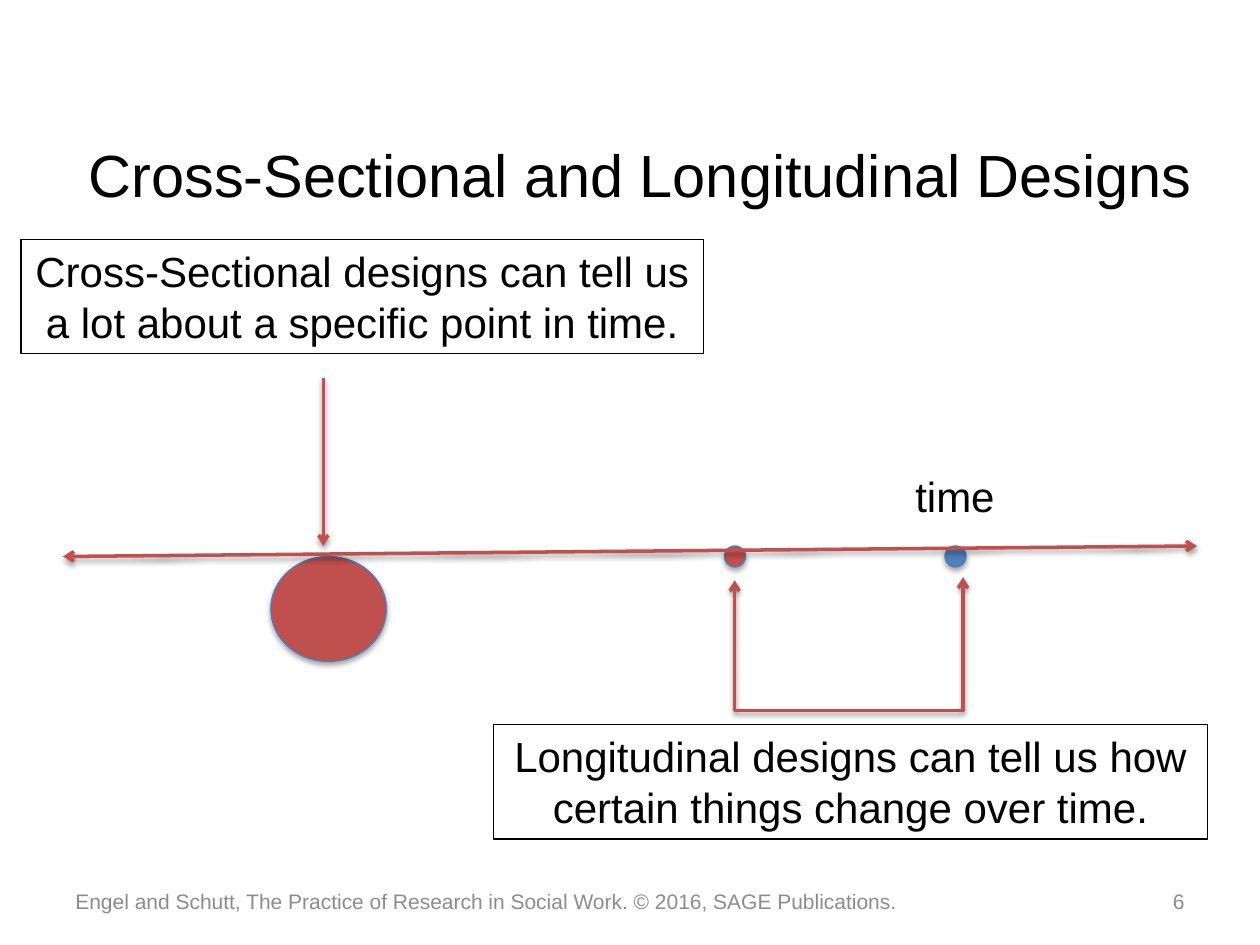
"""Build the slide on cross-sectional and longitudinal designs."""
from lxml.etree import SubElement
from pptx import Presentation
from pptx.dml.color import RGBColor
from pptx.enum.shapes import MSO_CONNECTOR as Link, MSO_SHAPE as Shape
from pptx.enum.text import MSO_ANCHOR as Anchor, PP_ALIGN as Align
from pptx.oxml.ns import qn
from pptx.util import Inches, Pt

BLACK = RGBColor(0x00, 0x00, 0x00)
WHITE = RGBColor(0xFF, 0xFF, 0xFF)
GREY = RGBColor(0x8C, 0x8C, 0x8C)
RED = RGBColor(0xC0, 0x50, 0x4D)
BLUE = RGBColor(0x4F, 0x81, 0xBD)
EDGE = RGBColor(0x4B, 0x7E, 0xBC)

deck = Presentation()
deck.slide_width, deck.slide_height = Inches(10), Inches(7.5)
UNIT = deck.slide_width / 120
slide = deck.slides.add_slide(deck.slide_layouts[5])
shapes = slide.shapes


def grid(*cells):
    return [round(cell * UNIT) for cell in cells]


def style(para, text, size, color, align):
    para.text = text
    para.alignment = align
    para.font.name = "Arial"
    para.font.size = Pt(size)
    para.font.color.rgb = color


title = shapes.title
title.left, title.top, title.width, title.height = grid(7, 10, 108, 13)
title.text_frame.vertical_anchor = Anchor.MIDDLE
style(title.text_frame.paragraphs[0], "Cross-Sectional and Longitudinal Designs", 34, BLACK, Align.CENTER)

dots = [
    (69, 52, 2, 2, RED),
    (90, 52, 2, 2, BLUE),
    (25.8, 53, 11, 10, RED),
]
for *place, color in dots:
    dot = shapes.add_shape(Shape.OVAL, *grid(*place))
    dot.fill.solid()
    dot.fill.fore_color.rgb = color
    dot.line.color.rgb = EDGE
    dot.line.width = Pt(0.75)

links = [
    (Link.ELBOW, (80.7, 44.25, 81, 66), ("headEnd", "tailEnd")),
    (Link.STRAIGHT, (6, 53, 114, 52), ("headEnd", "tailEnd")),
    (Link.STRAIGHT, (30.8, 36, 30.8, 52), ("tailEnd",)),
]
for kind, ends, tips in links:
    link = shapes.add_connector(kind, *grid(*ends))
    link.line.color.rgb = RED
    link.line.width = Pt(2)
    for tip in tips:
        SubElement(link.line._get_or_add_ln(), qn("a:" + tip), type="arrow")
    if kind == Link.ELBOW:
        link.rotation = 90
        frame = link._element.spPr.find(qn("a:xfrm"))
        frame.set("flipH", "1")
        frame.set("flipV", "1")
        preset = link._element.spPr.find(qn("a:prstGeom"))
        bends = preset.find(qn("a:avLst"))
        SubElement(bends, qn("a:gd"), name="adj1", fmla="val -4100000")

notes = [
    ("Longitudinal designs can tell us how certain things change over time.",
     (47, 69, 68, 10.9), 24, BLACK, Align.CENTER, True),
    ("time", (84.7, 44.2, 12.5, 6), 24, BLACK, Align.CENTER, False),
    ("Cross-Sectional designs can tell us a lot about a specific point in time.",
     (2, 22.8, 65, 10.9), 24, BLACK, Align.CENTER, True),
    ("Engel and Schutt, The Practice of Research in Social Work. © 2016, SAGE Publications.",
     (6, 83.4, 101, 4.8), 12, GREY, Align.LEFT, False),
    ("6", (108, 83.4, 6, 4.8), 12, GREY, Align.RIGHT, False),
]
for text, place, size, color, align, framed in notes:
    box = shapes.add_textbox(*grid(*place))
    box.text_frame.word_wrap = True
    box.text_frame.vertical_anchor = Anchor.MIDDLE if color == GREY else Anchor.TOP
    style(box.text_frame.paragraphs[0], text, size, color, align)
    if framed:
        box.fill.solid()
        box.fill.fore_color.rgb = WHITE
        box.line.color.rgb = BLACK
        box.line.width = Pt(0.75)

deck.save("out.pptx")
